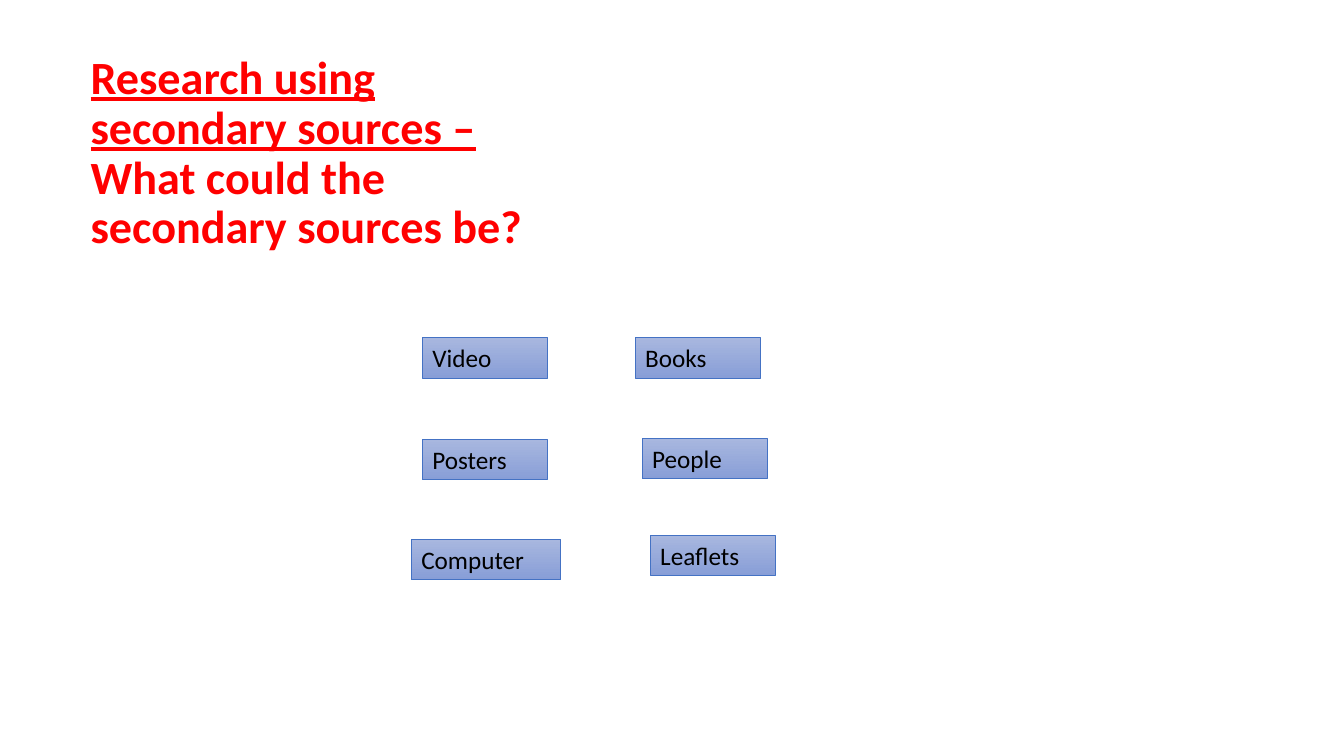
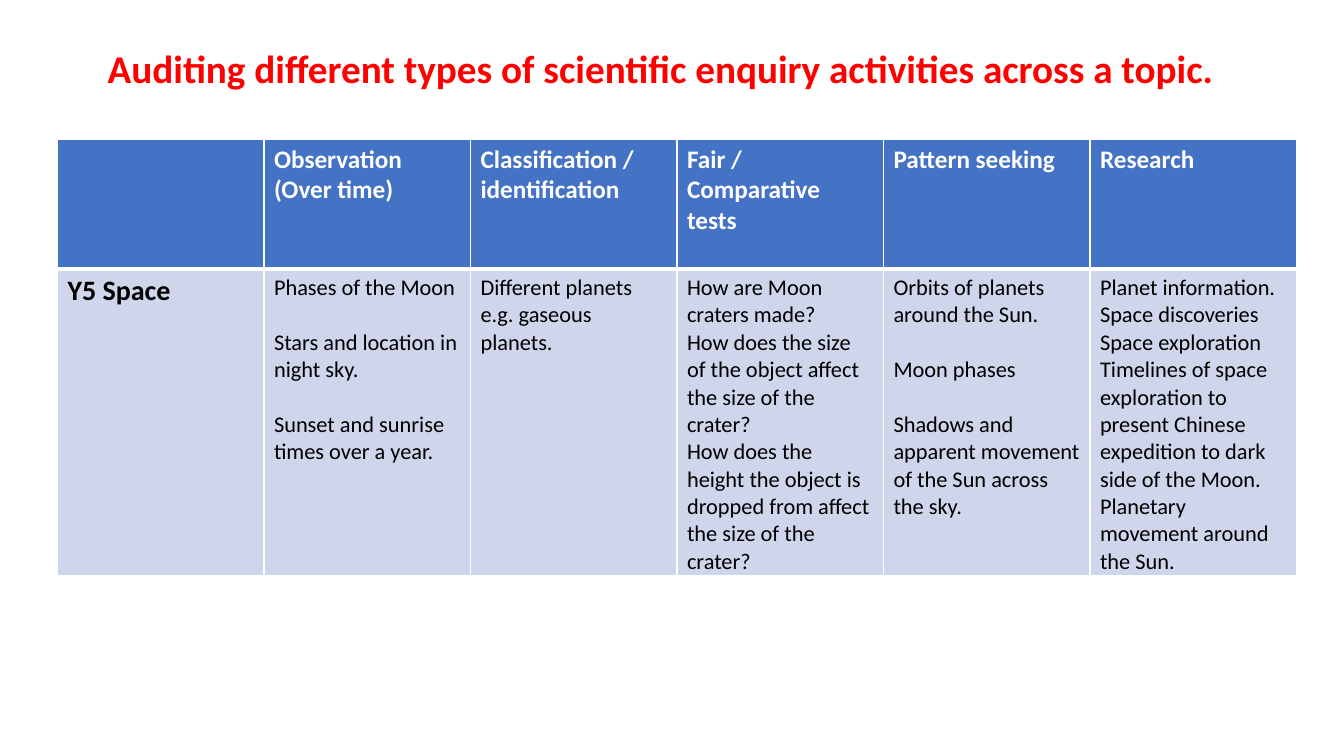
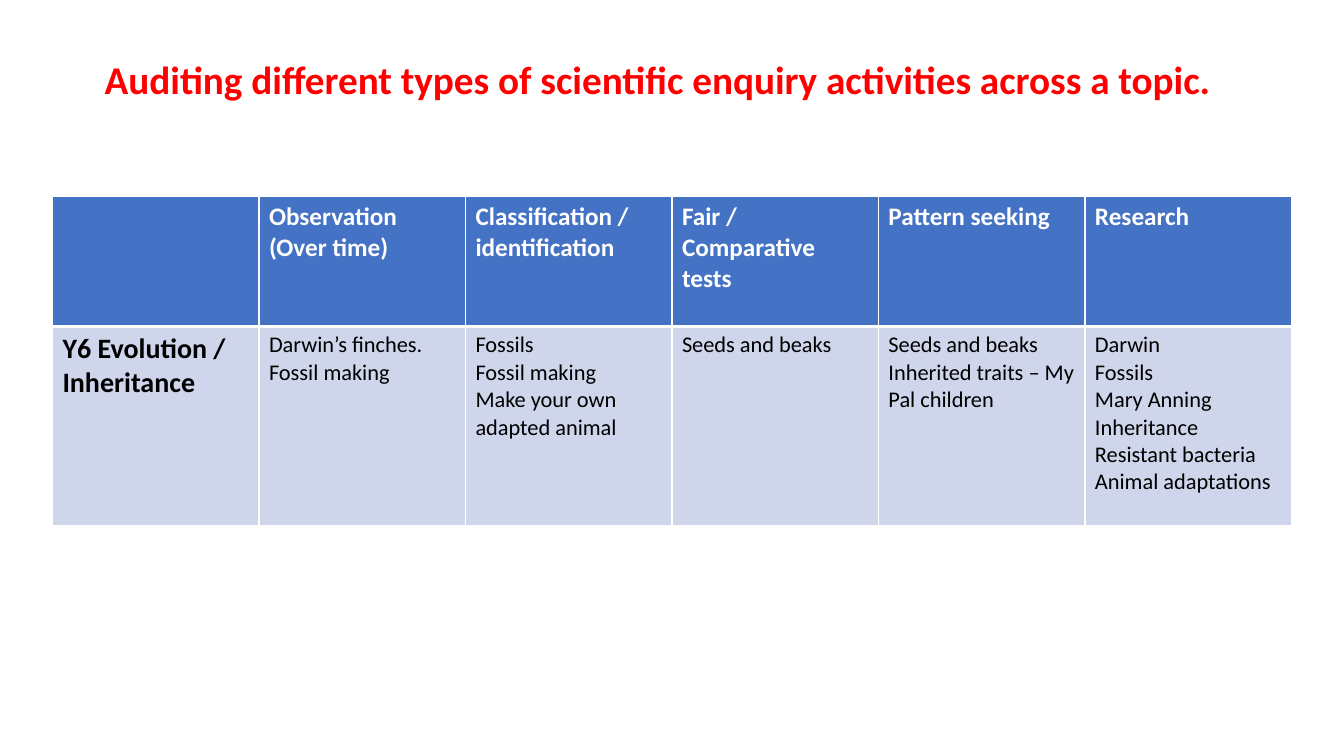
from dataclasses import dataclass

from pptx import Presentation
from pptx.dml.color import RGBColor
from pptx.enum.shapes import MSO_SHAPE
from pptx.enum.text import MSO_ANCHOR, MSO_AUTO_SIZE, PP_ALIGN
from pptx.oxml.ns import qn
from pptx.util import Inches, Pt
from lxml.etree import SubElement


@dataclass(frozen=True)
class Theme:
    font: str = "Calibri"
    title: str = "FF0000"
    text: str = "000000"
    white: str = "FFFFFF"
    accent: str = "4472C4"
    body_fill: str = "CFD5EA"
    source_top: str = "A8B7DF"
    source_bottom: str = "889ED7"
    question_size: float = 33
    title_size: float = 28
    topic_size: float = 20
    label_size: float = 18
    body_size: float = 16
    blank_line: float = 19.5
    thin: float = 1
    thick: float = 3


THEME = Theme()

SOURCES = [
    ("Video", 4.19, 3.35, 1.24),
    ("Books", 6.3, 3.35, 1.24),
    ("Posters", 4.19, 4.36, 1.24),
    ("People", 6.37, 4.35, 1.24),
    ("Computer", 4.08, 5.35, 1.48),
    ("Leaflets", 6.45, 5.31, 1.24),
]
SOURCE_HEIGHT = 0.4

AUDIT_TITLE = "Auditing different types of scientific enquiry activities across a topic."
ENQUIRY_TYPES = [
    "",
    "Observation (Over time)",
    "Classification / identification",
    "Fair / Comparative tests",
    "Pattern seeking",
    "Research",
]
AUDIT_WIDTH = 12.29
HEADER_HEIGHT = 1.29

SPACE_ACTIVITIES = [
    ["Phases of the Moon", "Stars and location in night sky.",
     "Sunset and sunrise times over a year."],
    ["Different planets e.g. gaseous planets."],
    ["How are Moon craters made?",
     "How does the size of the object affect the size of the crater?",
     "How does the height the object is dropped from affect the size of the crater?"],
    ["Orbits of planets around the Sun.", "Moon phases",
     "Shadows and apparent movement of the Sun across the sky."],
    ["Planet information.", "Space discoveries", "Space exploration",
     "Timelines of space exploration to present Chinese expedition to dark side of the Moon.",
     "Planetary movement around the Sun."],
]
SPACED_COLUMNS = {1, 4}

EVOLUTION_ACTIVITIES = [
    ["Darwin’s finches.", "Fossil making"],
    ["Fossils", "Fossil making", "Make your own adapted animal"],
    ["Seeds and beaks"],
    ["Seeds and beaks", "Inherited traits – My Pal children"],
    ["Darwin", "Fossils", "Mary Anning", "Inheritance",
     "Resistant bacteria", "Animal adaptations"],
]


def rgb(code):
    return RGBColor.from_string(code)


def style(paragraph, size, color, bold=False):
    paragraph.alignment = PP_ALIGN.LEFT
    font = paragraph.font
    font.name, font.size, font.bold = THEME.font, Pt(size), bold
    font.color.rgb = rgb(color)


def add_title(slide, runs, left, top, width, height, size):
    """Add a red title from (text, underlined) runs and return its paragraph."""
    box = slide.shapes.add_textbox(*map(Inches, (left, top, width, height)))
    box.text_frame.word_wrap = True
    paragraph = box.text_frame.paragraphs[0]
    for text, underlined in runs:
        run = paragraph.add_run()
        run.text = text
        run.font.underline = underlined
    style(paragraph, size, THEME.title, bold=True)
    return paragraph


def add_source(slide, name, left, top, width):
    source = slide.shapes.add_shape(
        MSO_SHAPE.RECTANGLE, *map(Inches, (left, top, width, SOURCE_HEIGHT)))
    source.shadow.inherit = False
    source.fill.gradient()
    source.fill.gradient_angle = 270
    for stop, color in zip(source.fill.gradient_stops,
                           (THEME.source_top, THEME.source_bottom)):
        stop.color.rgb = rgb(color)
    source.line.color.rgb = rgb(THEME.accent)
    source.line.width = Pt(0.5)
    frame = source.text_frame
    frame.word_wrap = True
    frame.auto_size = MSO_AUTO_SIZE.SHAPE_TO_FIT_TEXT
    frame.vertical_anchor = MSO_ANCHOR.TOP
    frame.text = name
    style(frame.paragraphs[0], THEME.label_size, THEME.text)


def set_borders(cell, top, bottom):
    """Draw white cell borders; must run before the cell fill is set."""
    properties = cell._tc.get_or_add_tcPr()
    widths = {"L": THEME.thin, "R": THEME.thin, "T": top, "B": bottom}
    for side, width in widths.items():
        line = SubElement(properties, qn(f"a:ln{side}"), w=str(Pt(width)))
        fill = SubElement(line, qn("a:solidFill"))
        SubElement(fill, qn("a:srgbClr"), val=THEME.white)


def fill_cell(cell, lines, fill, size, color, bold, gap=0):
    cell.fill.solid()
    cell.fill.fore_color.rgb = rgb(fill)
    cell.text_frame.text = "\n".join(lines)
    for index, paragraph in enumerate(cell.text_frame.paragraphs):
        style(paragraph, size, color, bold)
        if index and gap:
            paragraph.space_before = Pt(gap)


def add_audit(slide, topic, activities, left, top, body_height, spaced=()):
    """Add the audit table; columns in spaced get a line's gap between entries."""
    columns = len(ENQUIRY_TYPES)
    table = slide.shapes.add_table(
        2, columns, Inches(left), Inches(top), Inches(AUDIT_WIDTH),
        Inches(HEADER_HEIGHT + body_height)).table
    for row, height in zip(table.rows, (HEADER_HEIGHT, body_height)):
        row.height = Inches(height)
    for index, (enquiry, entries) in enumerate(
            zip(ENQUIRY_TYPES, [[topic], *activities])):
        table.columns[index].width = Inches(AUDIT_WIDTH / columns)
        header, body = table.cell(0, index), table.cell(1, index)
        set_borders(header, THEME.thin, THEME.thick)
        set_borders(body, THEME.thick, THEME.thin)
        fill_cell(header, [enquiry], THEME.accent, THEME.label_size, THEME.white, True)
        is_topic = index == 0
        fill_cell(body, entries, THEME.body_fill,
                  THEME.topic_size if is_topic else THEME.body_size,
                  THEME.text, is_topic,
                  THEME.blank_line if index in spaced else 0)


def build_sources(slide):
    question = add_title(
        slide,
        [("Research using secondary sources – ", True),
         ("What could the secondary sources be?", False)],
        0.8, 0.49, 4.86, 1.09, THEME.question_size)
    question.line_spacing = 0.9
    for source in SOURCES:
        add_source(slide, *source)


def build_space_audit(slide):
    add_audit(slide, "Y5 Space", SPACE_ACTIVITIES, 0.57, 1.38, 3.04, SPACED_COLUMNS)
    add_title(slide, [(AUDIT_TITLE, False)], 0.97, 0.39, 11.23, 0.57, THEME.title_size)


def build_evolution_audit(slide):
    add_audit(slide, "Y6 Evolution / Inheritance", EVOLUTION_ACTIVITIES,
              0.52, 1.95, 1.97)
    add_title(slide, [(AUDIT_TITLE, False)], 0.94, 0.5, 11.46, 0.57, THEME.title_size)


def main():
    deck = Presentation()
    deck.slide_width, deck.slide_height = Inches(13.33), Inches(7.5)
    blank = deck.slide_layouts[6]
    for build in (build_sources, build_space_audit, build_evolution_audit):
        build(deck.slides.add_slide(blank))
    deck.save("out.pptx")


if __name__ == "__main__":
    main()
